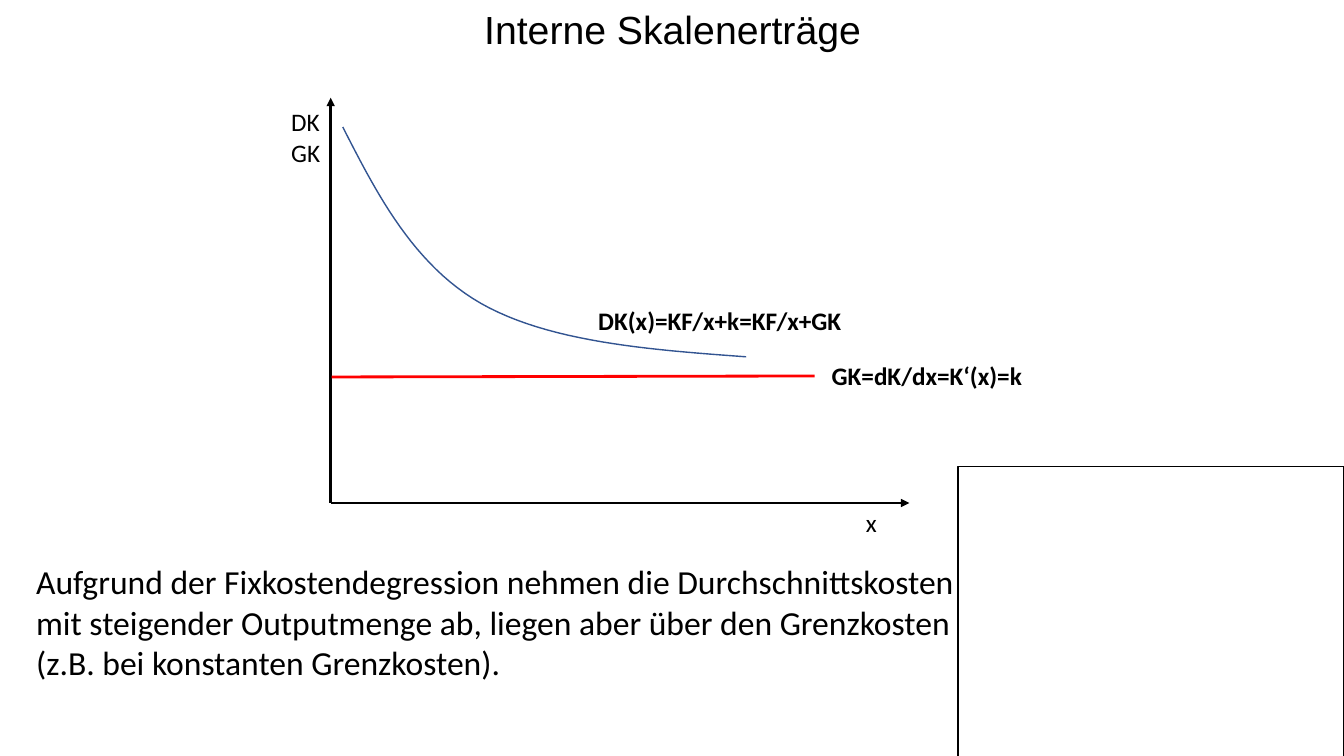
import dataclasses

import pptx
import pptx.dml.color
import pptx.enum.shapes
import pptx.enum.text
import pptx.oxml
import pptx.oxml.ns
import pptx.util

ALIGN = pptx.enum.text.PP_ALIGN
ANCHOR = pptx.enum.text.MSO_ANCHOR
CELL = pptx.util.Inches(0.1)  # the slide is a grid of 133.3 columns by 75 rows


@dataclasses.dataclass(frozen=True)
class Theme:
    ink: str = "000000"
    cost_curve: str = "325491"
    marginal: str = "FF0000"
    title_font: str = "Arial"
    text_font: str = "Calibri"
    title_size: int = 28
    body_size: int = 24
    label_size: int = 18
    thick: int = 2
    thin: int = 1


@dataclasses.dataclass(frozen=True)
class Box:
    """A region in grid columns and rows."""
    x: float
    y: float
    w: float
    h: float

    def inner(self, x, y, w, h):
        return Box(self.x + x, self.y + y, w, h)

    def point(self, x, y):
        return int((self.x + x) * CELL), int((self.y + y) * CELL)

    def emu(self):
        return [int(v * CELL) for v in (self.x, self.y, self.w, self.h)]


THEME = Theme()


def rgb(color):
    return pptx.dml.color.RGBColor.from_string(color)


def style_line(line, color, width):
    line.color.rgb = rgb(color)
    line.width = pptx.util.Pt(width)


def add_run(p, text, size, font=THEME.text_font, bold=False):
    r = p.add_run()
    r.text = text
    r.font.name = font
    r.font.size = pptx.util.Pt(size)
    r.font.bold = bold
    r.font.color.rgb = rgb(THEME.ink)


def add_text(slide, box, lines, size, bold=False, wrap=True, align=ALIGN.LEFT):
    tf = slide.shapes.add_textbox(*box.emu()).text_frame
    tf.word_wrap = wrap
    for i, text in enumerate(lines):
        p = tf.add_paragraph() if i else tf.paragraphs[0]
        p.alignment = align
        add_run(p, text, size, bold=bold)


def add_line(slide, start, end, color, arrow=False):
    line = slide.shapes.add_connector(
        pptx.enum.shapes.MSO_CONNECTOR.STRAIGHT, *start, *end)
    style_line(line.line, color, THEME.thick)
    if arrow:
        head = pptx.oxml.parse_xml(
            f'<a:tailEnd {pptx.oxml.ns.nsdecls("a")} type="triangle"/>')
        line.line._get_or_add_ln().append(head)
    line._element.spPr.append(
        pptx.oxml.parse_xml(f'<a:effectLst {pptx.oxml.ns.nsdecls("a")}/>'))


def bezier(a, b, c, d, steps=24):
    """Points after a on the cubic curve from a to d."""
    for i in range(1, steps + 1):
        t = i / steps
        u = 1 - t
        weights = (u ** 3, 3 * u * u * t, 3 * u * t * t, t ** 3)
        yield tuple(sum(k * q[axis] for k, q in zip(weights, (a, b, c, d)))
                    for axis in (0, 1))


def title(slide, box):
    sp = slide.shapes.title
    sp.left, sp.top, sp.width, sp.height = box.emu()
    tf = sp.text_frame
    tf.vertical_anchor = ANCHOR.MIDDLE
    p = tf.paragraphs[0]
    p.alignment = ALIGN.CENTER
    p.line_spacing = 0.9
    add_run(p, "Interne Skalenerträge", THEME.title_size, THEME.title_font)


def explanation(slide, box):
    add_text(slide, box, [
        "Aufgrund der Fixkostendegression nehmen die Durchschnittskosten "
        "mit steigender Outputmenge ab, liegen aber über den Grenzkosten "
        "(z.B. bei konstanten Grenzkosten)."], THEME.body_size)


def cost_diagram(slide, box):
    # Axes
    origin = box.point(0, box.h)
    for end in (box.point(0, 0), box.point(box.w, box.h)):
        add_line(slide, origin, end, THEME.ink, arrow=True)

    # Marginal cost
    add_line(slide, box.point(0.1, 27.7), box.point(48, 27.6), THEME.marginal)

    # Average cost: two joined cubic curves
    knots = [box.point(*k) for k in (
        (1.2, 2.9), (4.7, 9.8), (8.3, 16.6), (14.9, 20.4),
        (21.6, 24.2), (31.4, 25), (41.2, 25.7))]
    outline = slide.shapes.build_freeform(*knots[0])
    outline.add_line_segments(
        [*bezier(*knots[:4]), *bezier(*knots[3:])], close=False)
    curve = outline.convert_to_shape()
    curve.shadow.inherit = False
    curve.fill.background()
    style_line(curve.line, THEME.cost_curve, THEME.thin)

    # Labels
    size = THEME.label_size
    add_text(slide, box.inner(25.4, 20.1, 26.4, 4), ["DK(x)=KF/x+k=KF/x+GK"],
             size, bold=True, wrap=False, align=ALIGN.CENTER)
    add_text(slide, box.inner(48.7, 25.6, 30.9, 4), ["GK=dK/dx=K‘(x)=k"],
             size, bold=True)
    add_text(slide, box.inner(52.1, 40.1, 3.1, 4), ["x"], size, wrap=False)
    add_text(slide, box.inner(-4.9, 0.4, 4.9, 7.1), ["DK", "GK"], size,
             wrap=False)


def empty_frame(slide, box):
    sp = slide.shapes.add_shape(
        pptx.enum.shapes.MSO_SHAPE.RECTANGLE, *box.emu())
    sp.shadow.inherit = False
    sp.fill.background()
    style_line(sp.line, THEME.ink, THEME.thin)


def main():
    prs = pptx.Presentation()
    prs.slide_width = pptx.util.Inches(13.33)
    prs.slide_height = pptx.util.Inches(7.5)
    slide = prs.slides.add_slide(prs.slide_layouts.get_by_name("Title Only"))

    title(slide, Box(16.7, -0.3, 100, 7))
    explanation(slide, Box(2.6, 55.2, 93.5, 9.4))
    cost_diagram(slide, Box(32.8, 9.7, 57.4, 40.2))
    empty_frame(slide, Box(95, 46.3, 38.3, 28.8))

    prs.save("out.pptx")


if __name__ == "__main__":
    main()
